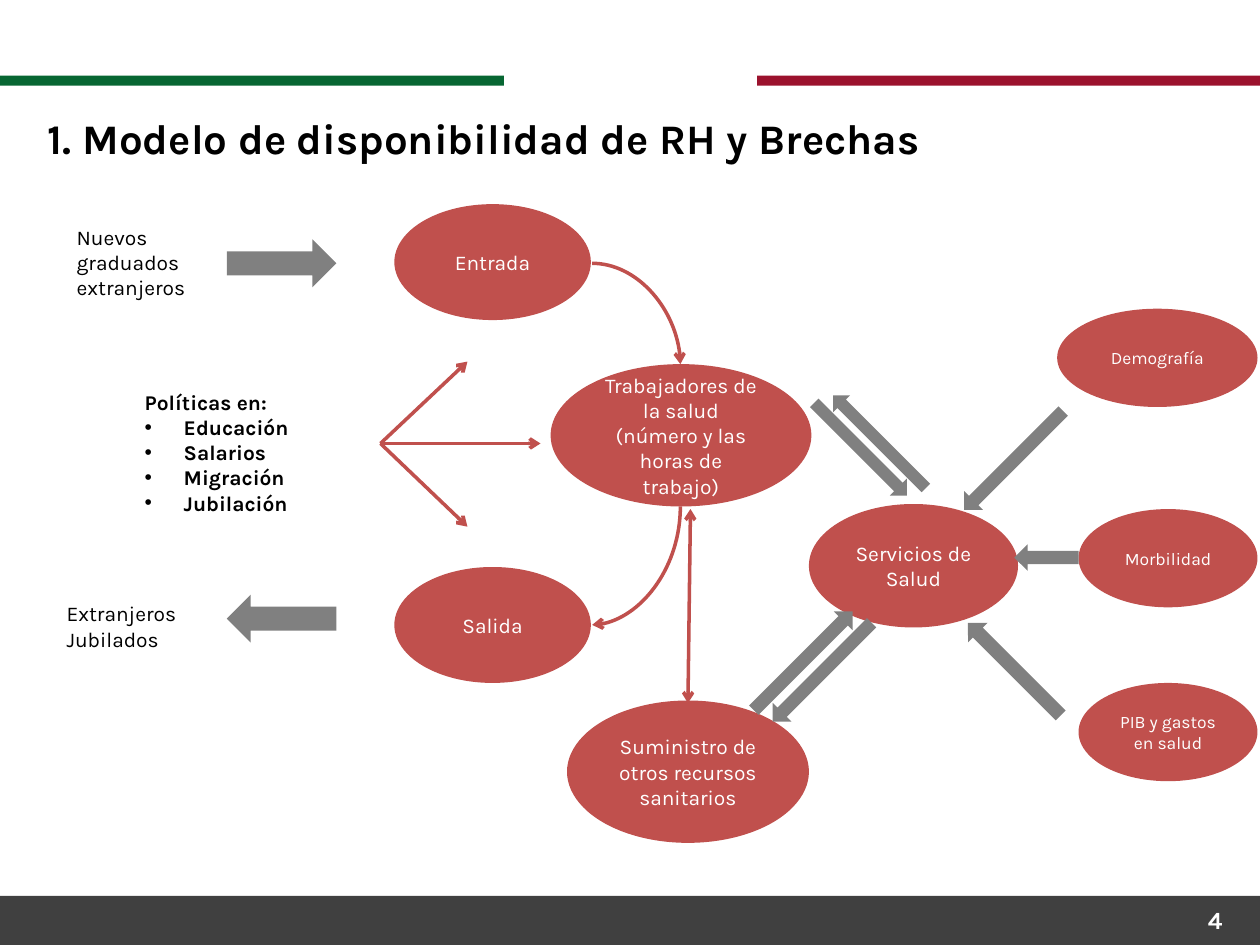
from dataclasses import dataclass

from lxml.etree import SubElement
from pptx import Presentation
from pptx.dml.color import RGBColor
from pptx.enum.shapes import MSO_CONNECTOR as LINK, MSO_SHAPE as SHAPE
from pptx.enum.text import MSO_ANCHOR as ANCHOR, PP_ALIGN as ALIGN
from pptx.oxml.ns import qn
from pptx.util import Inches, Pt


@dataclass(frozen=True)
class Theme:
    font: str = "Karla"
    green: str = "076632"
    crimson: str = "9B122D"
    footer: str = "404040"
    node: str = "C0504D"
    arrow: str = "808080"
    ink: str = "000000"
    paper: str = "FFFFFF"
    title_size: int = 24
    number_size: int = 14
    text_size: int = 12
    small_size: int = 10
    link_width: int = 2


THEME = Theme()


def write(frame, lines, size=THEME.text_size, color=THEME.ink, bold=False,
          align=ALIGN.LEFT, anchor=ANCHOR.TOP, bullets_from=None):
    """Fill a text frame, one paragraph a line."""
    frame.word_wrap = True
    frame.vertical_anchor = anchor
    for i, line in enumerate(lines):
        paragraph = frame.paragraphs[0] if i == 0 else frame.add_paragraph()
        paragraph.text = line
        paragraph.alignment = align
        if bullets_from is not None and i >= bullets_from:
            props = paragraph._p.get_or_add_pPr()
            props.set("marL", str(Inches(0.31)))
            props.set("indent", str(-Inches(0.31)))
            SubElement(props, qn("a:buFont")).set("typeface", "Arial")
            SubElement(props, qn("a:buChar")).set("char", "•")
        font = paragraph.font
        font.name, font.size, font.bold = THEME.font, Pt(size), bold
        font.color.rgb = RGBColor.from_string(color)


@dataclass
class Region:
    """A part of the slide; its parts are placed from its top left corner."""
    slide: object
    left: float
    top: float

    def place(self, x, y):
        return Inches(self.left + x), Inches(self.top + y)

    def box(self, x, y, width, height):
        return *self.place(x, y), Inches(width), Inches(height)

    def solid(self, kind, box, color, rotation=0):
        shape = self.slide.shapes.add_shape(kind, *self.box(*box))
        shape.shadow.inherit = False
        shape.fill.solid()
        shape.fill.fore_color.rgb = RGBColor.from_string(color)
        shape.line.fill.background()
        shape.rotation = rotation
        return shape

    def node(self, text, *box, size=THEME.text_size):
        ellipse = self.solid(SHAPE.OVAL, box, THEME.node)
        write(ellipse.text_frame, [text], size, THEME.paper,
              align=ALIGN.CENTER, anchor=ANCHOR.MIDDLE)

    def text(self, lines, *box, **style):
        label = self.slide.shapes.add_textbox(*self.box(*box))
        write(label.text_frame, lines, **style)

    def link(self, start, end, ends=("tailEnd",), curved=False):
        kind = LINK.CURVE if curved else LINK.STRAIGHT
        connector = self.slide.shapes.add_connector(
            kind, *self.place(*start), *self.place(*end))
        connector.line.color.rgb = RGBColor.from_string(THEME.node)
        connector.line.width = Pt(THEME.link_width)
        props = connector._element.spPr
        if curved:  # a single quarter bend
            props.find(qn("a:prstGeom")).set("prst", "curvedConnector2")
        for tag in ends:
            SubElement(props.find(qn("a:ln")), qn(f"a:{tag}")).set("type", "arrow")
        SubElement(props, qn("a:effectLst"))


def add_bands(region):
    bar_width, bar_height = 4, 0.08
    region.solid(SHAPE.RECTANGLE, (0, 7.11, 10.02, 0.39), THEME.footer)
    for x, color in ((0, THEME.green), (6.01, THEME.crimson)):
        region.solid(SHAPE.RECTANGLE, (x, 0.6, bar_width, bar_height), color)


def add_title(region, text):
    title = region.slide.shapes.title
    title.left, title.top, title.width, title.height = region.box(0, 0, 8.98, 0.52)
    write(title.text_frame, [text], THEME.title_size, bold=True)


def add_workforce(region):
    # Stocks and flows of health workers
    region.node("Entrada", 2.73, 0.02, 1.56, 0.92)
    region.node("Trabajadores de la salud (número y las horas de trabajo)",
                3.97, 1.29, 2.07, 1.13)
    region.node("Salida", 2.73, 2.9, 1.56, 0.92)
    region.node("Suministro de otros recursos sanitarios", 4.1, 3.96, 1.92, 1.13)

    # Sources, policies and exits
    region.text(["Nuevos graduados extranjeros"], 0.11, 0.13, 1.38, 0.71)
    region.text(["Políticas en:", "Educación", "Salarios", "Migración", "Jubilación"],
                0.65, 1.44, 1.39, 1.11, bold=True, bullets_from=1)
    region.text(["Extranjeros", "Jubilados"], 0.03, 3.12, 1.39, 0.5)
    for kind, y in ((SHAPE.RIGHT_ARROW, 0.3), (SHAPE.LEFT_ARROW, 3.12)):
        region.solid(kind, (1.4, y, 0.87, 0.38), THEME.arrow)

    # Policy fan, bends through the workers, and the exchange with supplies
    for target in ((3.89, 1.92), (3.31, 1.27), (3.31, 2.58)):
        region.link((2.62, 1.92), target)
    region.link((4.3, 0.49), (5, 1.29), curved=True)
    region.link((4.3, 3.36), (5, 2.42), ends=("headEnd",), curved=True)
    region.link((5.06, 3.98), (5.08, 2.44), ends=("headEnd", "tailEnd"))


def add_services(region):
    region.node("Servicios de Salud", 0.62, 1.6, 1.66, 0.98)

    # Drivers of demand
    drivers = (("Demografía", 2.59, 0.05, 1.59),
               ("Morbilidad", 2.76, 1.64, 1.42),
               ("PIB y gastos en salud", 2.76, 3.02, 1.42))
    for name, x, y, width in drivers:
        region.node(name, x, y, width, 0.78, size=THEME.small_size)

    # Block arrows: x, y, width, height, rotation
    arrows = ((0.02, 2.74, 1.11, 0.21, 315), (0.17, 2.83, 1.11, 0.21, 135),
              (0.51, 1.07, 1.04, 0.19, 45), (0.66, 1.01, 1.04, 0.19, 225),
              (1.73, 2.8, 1.04, 0.22, 225), (1.69, 1.15, 1.11, 0.21, 135),
              (2.25, 1.92, 0.51, 0.21, 180))
    for *box, rotation in arrows:
        region.solid(SHAPE.RIGHT_ARROW, box, THEME.arrow, rotation)


def add_page_number(region, number):
    region.text([number], 0, 0, 2.33, 0.4, size=THEME.number_size,
                color=THEME.paper, bold=True, align=ALIGN.RIGHT)


def main():
    deck = Presentation()
    deck.slide_width, deck.slide_height = Inches(10), Inches(7.5)
    slide = deck.slides.add_slide(deck.slide_layouts[5])
    add_bands(Region(slide, 0, 0))
    add_title(Region(slide, 0.28, 0.84), "1. Modelo de disponibilidad de RH y Brechas")
    add_workforce(Region(slide, 0.4, 1.6))
    add_services(Region(slide, 5.8, 2.4))
    add_page_number(Region(slide, 7.47, 7.13), "4")
    deck.save("out.pptx")


if __name__ == "__main__":
    main()
